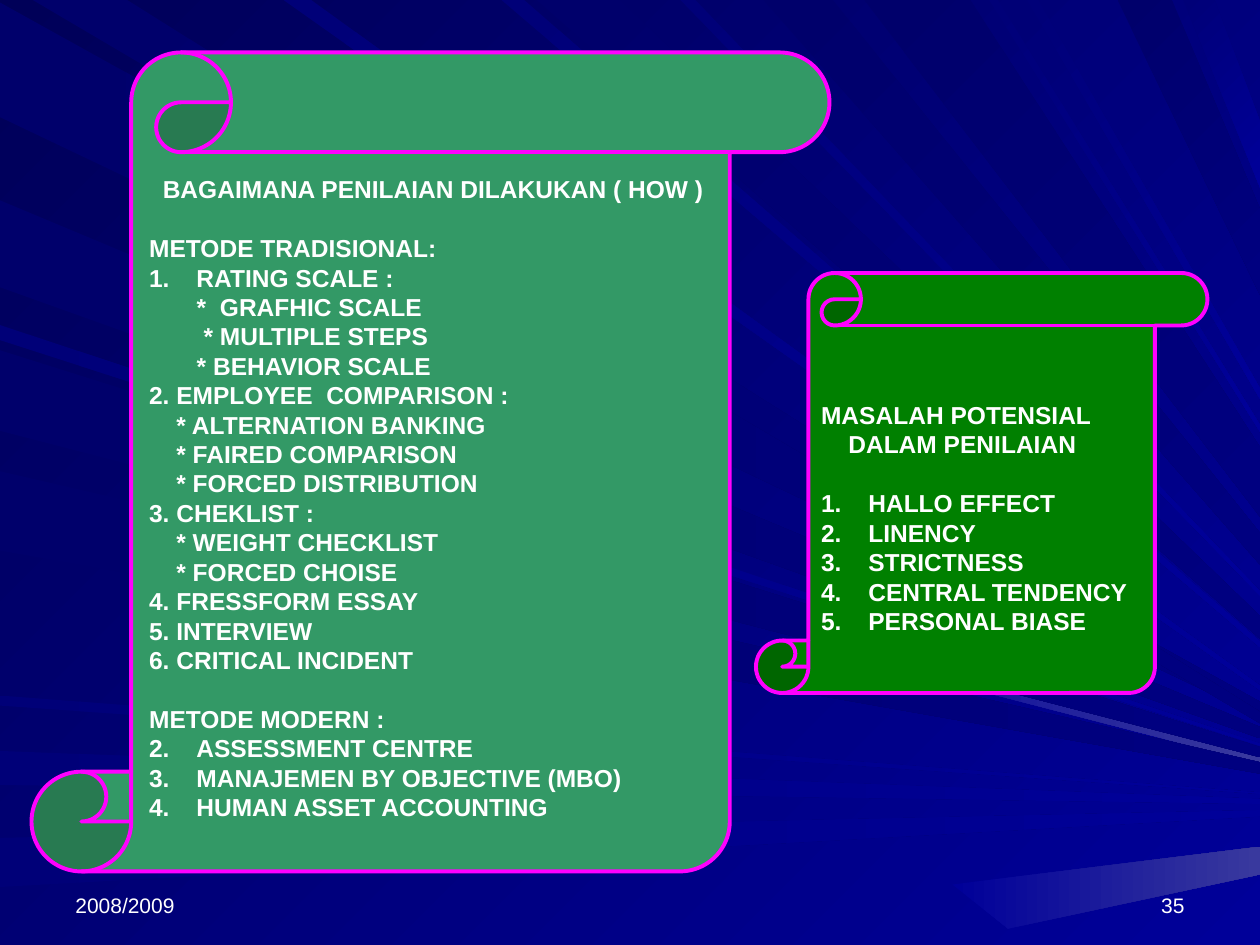
"""Build the slide on appraisal methods and rating problems over a blue ray backdrop."""
from lxml import etree
from pptx import Presentation
from pptx.dml.color import RGBColor
from pptx.enum.shapes import MSO_SHAPE
from pptx.enum.text import MSO_ANCHOR, MSO_AUTO_SIZE, PP_ALIGN
from pptx.oxml.ns import qn
from pptx.util import Pt

SCROLL = MSO_SHAPE.VERTICAL_SCROLL
TOP, BOTTOM = MSO_ANCHOR.TOP, MSO_ANCHOR.BOTTOM
NO_FIT = MSO_AUTO_SIZE.NONE
LEFT, RIGHT, JUSTIFY = PP_ALIGN.LEFT, PP_ALIGN.RIGHT, PP_ALIGN.JUSTIFY
WHITE = RGBColor.from_string("FFFFFF")
MAGENTA = RGBColor.from_string("FF00FF")
SEA_GREEN = RGBColor.from_string("339966")
GREEN = RGBColor.from_string("008000")
NIGHT = RGBColor.from_string("000058")
DARK = RGBColor.from_string("00006B")
DUSK = RGBColor.from_string("000078")
NAVY = RGBColor.from_string("000080")
BLUE = RGBColor.from_string("000099")
GLOW = RGBColor.from_string("39399E")
RAY_UNIT = Pt(0.72)
SLIDE_EDGE = 1000
WIDE_RAY = 40
HANG = 27

PLAIN = {}
FIRST = {"number": 1}
SECOND = {"number": 2}
SUB = {"indent": 15.6}
DEEP = {"indent": 27.2}
DEEPER = {"indent": 31.1}
CENTRED = {"indent": 7.8}
APART = {"gap": 16.8}
FIRST_APART = FIRST | APART


def paint(fill, start, end, angle):
    if start == end:
        fill.solid()
        fill.fore_color.rgb = start
        return
    fill.gradient()
    fill.gradient_angle = (360 - angle) % 360
    for stop, color in zip(fill.gradient_stops, (start, end)):
        stop.color.rgb = color


def write(box, place, lines, size, bold, align, anchor):
    box.left, box.top, box.width, box.height = [Pt(length) for length in place]
    frame = box.text_frame
    frame.word_wrap = True
    frame.auto_size = NO_FIT
    frame.vertical_anchor = anchor
    frame.text = "\n".join(words for words, _ in lines)
    for paragraph, (_, style) in zip(frame.paragraphs, lines):
        number = style.get("number")
        props = paragraph._p.get_or_add_pPr()
        props.set("marL", str(Pt(HANG if number else style.get("indent", 0))))
        props.set("indent", str(Pt(-HANG if number else 0)))
        if number:
            etree.SubElement(props, qn("a:buAutoNum"), type="arabicPeriod", startAt=str(number))
        else:
            etree.SubElement(props, qn("a:buNone"))
        paragraph.alignment = align
        paragraph.space_before = Pt(style.get("gap", 0))
        for run in paragraph.runs:
            run.font.name = "Arial"
            run.font.size = Pt(size)
            run.font.bold = bold
            run.font.color.rgb = WHITE


prs = Presentation()
prs.slide_width, prs.slide_height = Pt(720), Pt(540)
slide = prs.slides.add_slide(prs.slide_layouts[3])
shapes = slide.shapes
heading, methods, problems = slide.placeholders
paint(slide.background.fill, NIGHT, BLUE, 45)

left_rays = [(2, 93), (159, 228), (258, 270), (278, 342), (374, 437), (552, 560), (596, 623), (665, 704)]
top_rays = [(26, 101), (225, 247), (398, 416), (426, 492), (540, 552), (606, 661),
            (686, 770), (785, 792), (815, 824), (887, 930), (939, 964)]
rays = [
    (BLUE, GLOW, 0, [(756, 702), (1000, 672), (1000, 694), (800, 737)]),
    (BLUE, GLOW, 0, [(637, 485), (1000, 601), (1000, 606), (633, 511)]),
]
for spans, from_top, focus_x, focus_y in [(left_rays, False, 1150, 640), (top_rays, True, 1230, 710)]:
    for near, far in spans:
        starts = [(side, 0) if from_top else (0, side) for side in (near, far)]
        ends = []
        for x, y in starts:
            share = (SLIDE_EDGE - x) / (focus_x - x)
            ends.append((SLIDE_EDGE, round(y + share * (focus_y - y))))
        wide = far - near > WIDE_RAY
        colors = (DARK, NAVY) if wide else (DUSK, BLUE)
        rays.append((*colors, 45 if from_top else 0, starts + ends[::-1]))

for start, end, angle, corners in rays:
    outline = shapes.build_freeform(*corners[0], scale=RAY_UNIT)
    outline.add_line_segments(corners[1:], close=True)
    ray = outline.convert_to_shape()
    ray.shadow.inherit = False
    ray.line.fill.background()
    paint(ray.fill, start, end, angle)

for place, color in [((18, 30, 456, 468), SEA_GREEN), ((432, 156, 258, 240), GREEN)]:
    scroll = shapes.add_shape(SCROLL, *[Pt(length) for length in place])
    scroll.shadow.inherit = False
    paint(scroll.fill, color, color, 0)
    scroll.line.color.rgb = MAGENTA
    scroll.line.width = Pt(2.25)

heading_lines = [("BAGAIMANA PENILAIAN DILAKUKAN ( HOW )", CENTRED)]
method_lines = [
    ("METODE TRADISIONAL:", PLAIN),
    ("RATING SCALE :", FIRST),
    ("*  GRAFHIC SCALE", DEEP),
    ("* MULTIPLE STEPS", DEEPER),
    ("* BEHAVIOR SCALE", DEEP),
    ("2. EMPLOYEE  COMPARISON :", PLAIN),
    ("* ALTERNATION BANKING", SUB),
    ("* FAIRED COMPARISON", SUB),
    ("* FORCED DISTRIBUTION", SUB),
    ("3. CHEKLIST :", PLAIN),
    ("* WEIGHT CHECKLIST", SUB),
    ("* FORCED CHOISE", SUB),
    ("4. FRESSFORM ESSAY", PLAIN),
    ("5. INTERVIEW", PLAIN),
    ("6. CRITICAL INCIDENT", PLAIN),
    ("METODE MODERN :", APART),
    ("ASSESSMENT CENTRE", SECOND),
    ("MANAJEMEN BY OBJECTIVE (MBO)", SECOND),
    ("HUMAN ASSET ACCOUNTING", SECOND),
]
problem_lines = [
    ("MASALAH POTENSIAL", PLAIN),
    ("DALAM PENILAIAN", SUB),
    ("HALLO EFFECT", FIRST_APART),
    ("LINENCY", FIRST),
    ("STRICTNESS", FIRST),
    ("CENTRAL TENDENCY", FIRST),
    ("PERSONAL BIASE", FIRST),
]
for box, place, lines in [
    (heading, (78, 96, 336, 24), heading_lines),
    (methods, (78, 129.6, 336, 342), method_lines),
    (problems, (462, 225, 192, 141), problem_lines),
]:
    write(box, place, lines, 14, True, JUSTIFY, TOP)
    shapes._spTree.append(box._element)

for words, left, align in [("2008/2009", 36, LEFT), ("35", 516, RIGHT)]:
    place = (left, 492, 168, 36)
    footer = shapes.add_textbox(*[Pt(length) for length in place])
    write(footer, place, [(words, PLAIN)], 12, False, align, BOTTOM)

prs.save("out.pptx")
